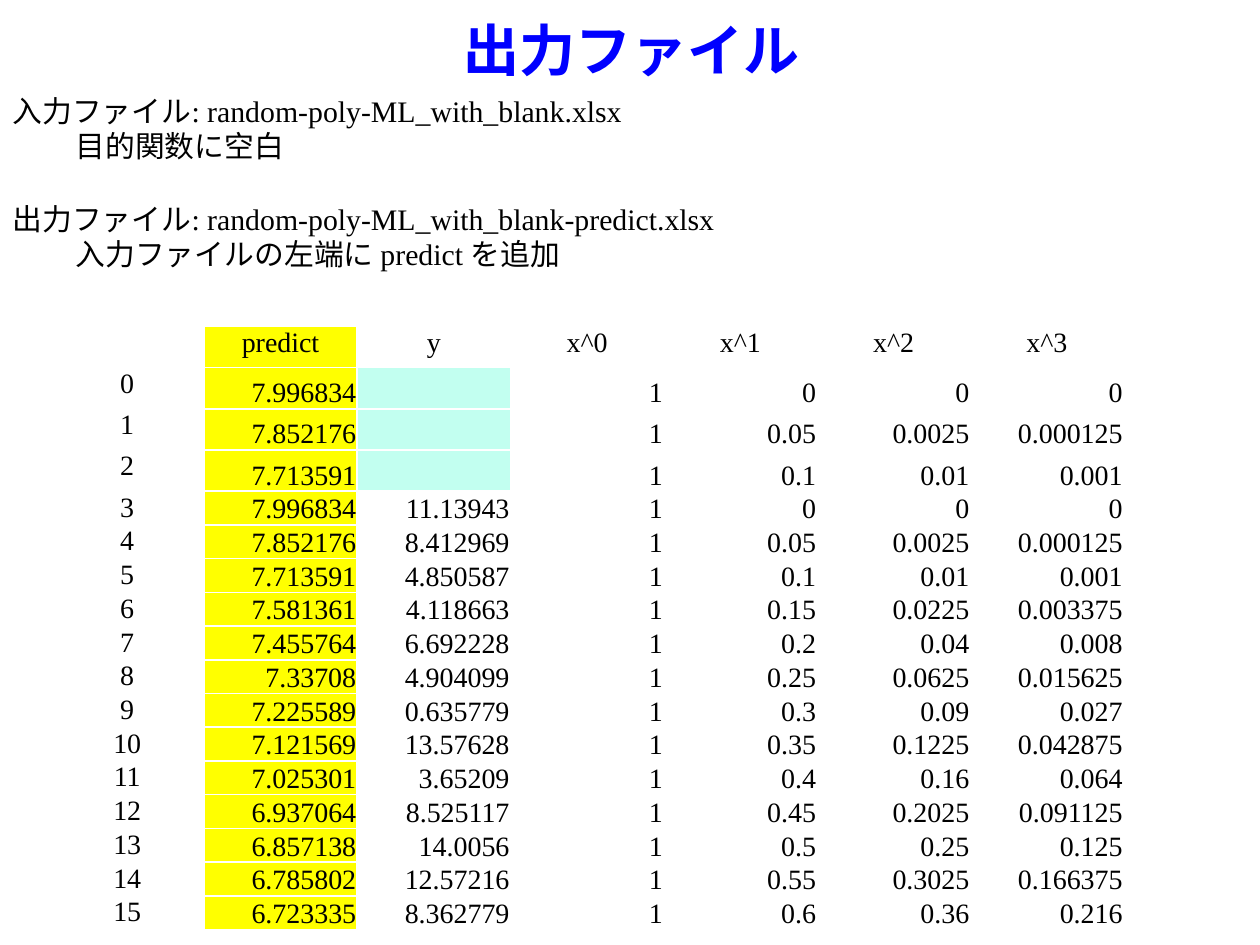
"""Build the output file slide: title, file notes and the predict table."""
from lxml.etree import fromstring
from pptx import Presentation
from pptx.dml.color import RGBColor
from pptx.enum.text import MSO_ANCHOR, MSO_AUTO_SIZE, PP_ALIGN
from pptx.util import Cm, Pt

BLUE = RGBColor(0x00, 0x00, 0xFF)
BLACK = RGBColor(0x00, 0x00, 0x00)
YELLOW = RGBColor(0xFF, 0xFF, 0x00)
MINT = RGBColor(0xC2, 0xFF, 0xF0)
NS = "http://schemas.openxmlformats.org/drawingml/2006/main"
EDGE = ('<a:{} xmlns:a="' + NS + '" w="12700"><a:solidFill>'
        '<a:srgbClr val="FFFFFF"/></a:solidFill></a:{}>')

NOTES = [
    "入力ファイル: random-poly-ML_with_blank.xlsx",
    "\t目的関数に空白",
    "出力ファイル: random-poly-ML_with_blank-predict.xlsx",
    "\t入力ファイルの左端に predict を追加",
]
HEADS = ["", "predict", "y", "x^0", "x^1", "x^2", "x^3"]
PREDICT = ["7.996834", "7.852176", "7.713591", "7.581361", "7.455764",
           "7.33708", "7.225589", "7.121569", "7.025301", "6.937064",
           "6.857138", "6.785802", "6.723335"]
TARGET = ["11.13943", "8.412969", "4.850587", "4.118663", "6.692228",
          "4.904099", "0.635779", "13.57628", "3.65209", "8.525117",
          "14.0056", "12.57216", "8.362779"]
BLANKS = 3


def style(para, size, color, align):
    para.alignment = align
    para.font.name = "Times New Roman"
    para.font.size = Pt(size)
    para.font.color.rgb = color


def place(shape, left, top, width, height):
    shape.left, shape.top = Cm(left), Cm(top)
    shape.width, shape.height = Cm(width), Cm(height)
    shape.text_frame.auto_size = MSO_AUTO_SIZE.NONE


deck = Presentation()
deck.slide_width, deck.slide_height = Cm(25.4), Cm(19.05)
slide = deck.slides.add_slide(deck.slide_layouts[1])

title = slide.shapes.title
place(title, 0.03, 0, 25.4, 1.98)
title.text_frame.text = "出力ファイル"
title.text_frame.vertical_anchor = MSO_ANCHOR.MIDDLE
head = title.text_frame.paragraphs[0]
style(head, 32, BLUE, PP_ALIGN.CENTER)
head.font.bold = True

body = slide.placeholders[1]
place(body, 0, 1.75, 25.2, 3.96)
body.text_frame.text = "\n".join(NOTES)
for i, para in enumerate(body.text_frame.paragraphs):
    style(para, 17, BLACK, PP_ALIGN.LEFT)
    para.line_spacing = Pt(20.25)
    para.space_before = Pt(21 if i == 2 else 0)
    props = para._p.get_or_add_pPr()
    props.set("marL", "0")
    props.set("indent", "0")
    props.insert_element_before(
        fromstring(f'<a:buNone xmlns:a="{NS}"/>'),
        "a:tabLst", "a:defRPr", "a:extLst")

rows = [HEADS]
for i, y in enumerate([""] * BLANKS + TARGET):
    step = i if i < BLANKS else i - BLANKS
    x = step * 0.05
    rows.append([str(i), PREDICT[step], y] + [f"{x ** n:g}" for n in range(4)])

frame = slide.shapes.add_table(len(rows), len(HEADS), Cm(1.02), Cm(6.58),
                               Cm(21.6), Cm(12.16))
table = frame.table
table.first_row = table.horz_banding = False
for col in table.columns:
    col.width = Cm(3.09)
for r, row in enumerate(rows):
    table.rows[r].height = Cm(0.83 if r <= BLANKS else 0.68)
    for c, text in enumerate(row):
        cell = table.cell(r, c)
        cell.text = text
        cell.margin_left = cell.margin_right = cell.margin_top = Cm(0.02)
        cell.margin_bottom = 0
        label = r == 0 or c == 0
        cell.vertical_anchor = MSO_ANCHOR.TOP if label else MSO_ANCHOR.BOTTOM
        style(cell.text_frame.paragraphs[0], 16, BLACK,
              PP_ALIGN.CENTER if label else PP_ALIGN.RIGHT)
        props = cell._tc.get_or_add_tcPr()
        for side in ("lnL", "lnR", "lnT", "lnB"):
            props.append(fromstring(EDGE.format(side, side)))
        if c == 1 or (c == 2 and not text):
            cell.fill.solid()
            cell.fill.fore_color.rgb = YELLOW if c == 1 else MINT
        else:
            cell.fill.background()

deck.save("out.pptx")
